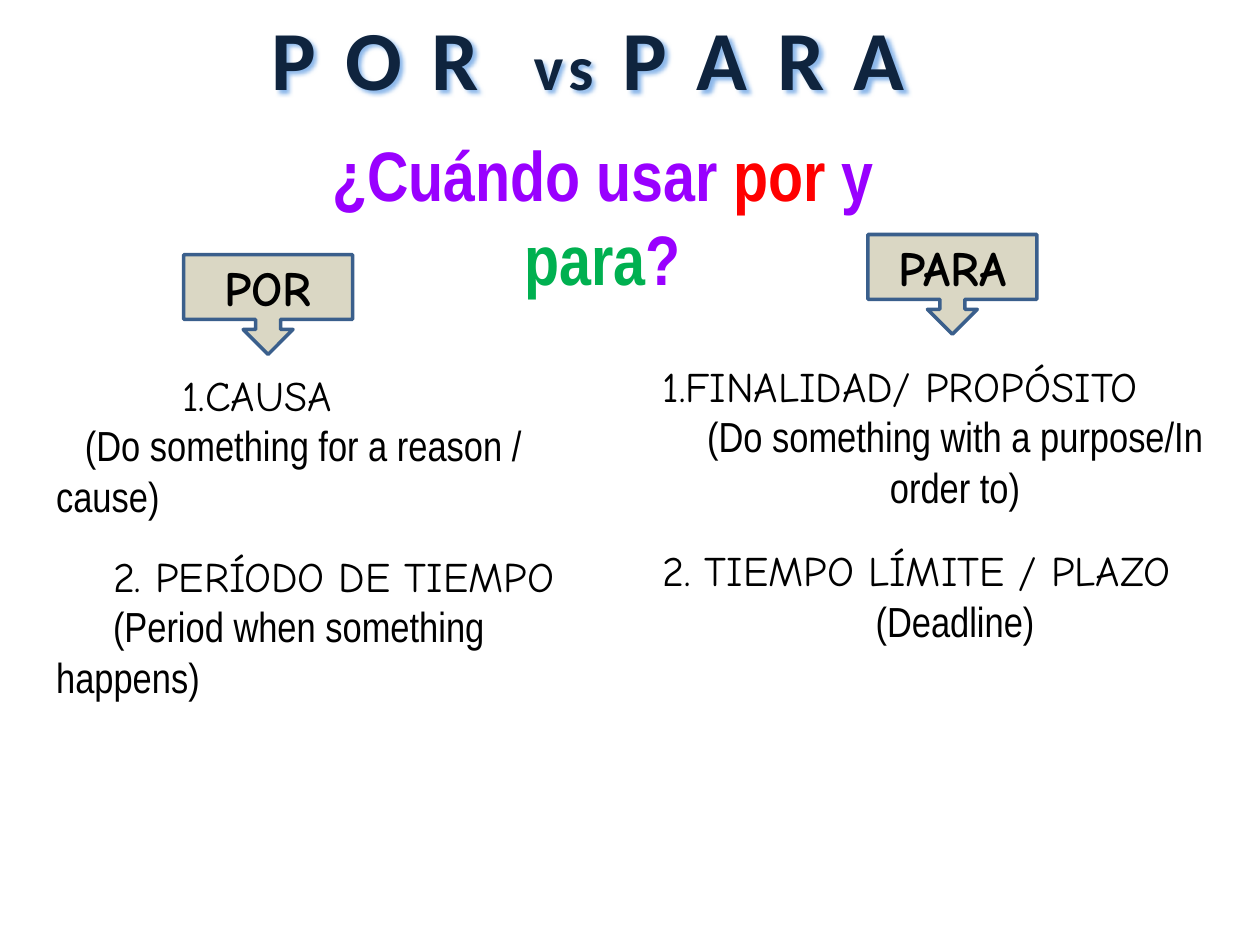
from pptx import Presentation
from pptx.dml.color import RGBColor
from pptx.enum.shapes import MSO_SHAPE
from pptx.enum.text import MSO_ANCHOR, PP_ALIGN
from pptx.oxml import parse_xml
from pptx.oxml.ns import nsdecls, qn
from pptx.util import Pt
from lxml import etree

CALLOUT = MSO_SHAPE.DOWN_ARROW_CALLOUT
TOP, MIDDLE = MSO_ANCHOR.TOP, MSO_ANCHOR.MIDDLE
LEFT, CENTER = PP_ALIGN.LEFT, PP_ALIGN.CENTER

NARROW, HAND, HEADING = "Arial Narrow", "Comic Neue", "Calibri"
BLACK, NAVY, PURPLE, RED, GREEN = "000000", "0F243E", "9900FF", "FF0000", "00B050"
TAN, BLUE = "948A54", "3A5F8C"


def color(value):
    return RGBColor.from_string(value)


def add_run(para, text, font, size, tint=BLACK, bold=False, spacing=0):
    span = para.add_run()
    span.text = text
    span.font.name = font
    span.font.size = Pt(size)
    span.font.bold = bold
    span.font.color.rgb = color(tint)
    if spacing:
        span.font._element.set("spc", str(round(spacing * 100)))


def add_textbox(page, box):
    frame = page.shapes.add_textbox(*map(Pt, box)).text_frame
    frame.word_wrap = True
    return frame


def add_title(page, box):
    title = page.shapes.title
    title.left, title.top, title.width, title.height = map(Pt, box)
    frame = title.text_frame
    frame.word_wrap = False
    frame.vertical_anchor = TOP
    para = frame.paragraphs[0]
    para.alignment = CENTER
    # The wide space sets the first word apart from "vs"
    for text, size, spacing in (("P O R", 48, 3), (" ", 48, 17),
                                ("vs", 36, 3), (" P A R A ", 48, 3)):
        add_run(para, text, HEADING, size, NAVY, True, spacing)
    # Soft light blue shadow behind the letters
    title._element.spPr.append(parse_xml(
        f'<a:effectLst {nsdecls("a")}>'
        '<a:outerShdw blurRad="25400" dist="25400" dir="2700000" algn="tl">'
        '<a:srgbClr val="8DB8EA"/></a:outerShdw></a:effectLst>'))


def add_question(page, box):
    para = add_textbox(page, box).paragraphs[0]
    para.alignment = CENTER
    for text, tint in (("¿Cuándo usar ", PURPLE), ("por", RED), (" y ", PURPLE),
                       ("para", GREEN), ("?", PURPLE)):
        add_run(para, text, NARROW, 40, tint, True)


def add_callout(page, box, word):
    callout = page.shapes.add_shape(CALLOUT, *map(Pt, box))
    callout.shadow.inherit = False
    callout.fill.solid()
    callout.fill.fore_color.rgb = color(TAN)
    tint = callout._element.spPr.find(qn("a:solidFill"))[0]
    etree.SubElement(tint, qn("a:alpha")).set("val", "34000")
    callout.line.color.rgb = color(BLUE)
    callout.line.width = Pt(2)
    frame = callout.text_frame
    frame.vertical_anchor = MIDDLE
    para = frame.paragraphs[0]
    para.alignment = CENTER
    add_run(para, word, HAND, 28, bold=True)


def add_uses(page, box, uses, gap, note_align):
    """Each use is a heading and a note, both with a first-line indent."""
    frame = add_textbox(page, box)
    para = frame.paragraphs[0]
    for number, (heading, heading_indent, note, note_indent) in enumerate(uses):
        if number:
            para = frame.add_paragraph()
            para.space_before = Pt(gap)
        para.alignment = LEFT
        para._p.get_or_add_pPr().set("indent", str(Pt(heading_indent)))
        add_run(para, heading, HAND, 24)
        para = frame.add_paragraph()
        para.alignment = note_align
        para._p.get_or_add_pPr().set("indent", str(Pt(note_indent)))
        add_run(para, note, NARROW, 24)


def main():
    deck = Presentation()
    deck.slide_width, deck.slide_height = Pt(720), Pt(540)
    page = deck.slides.add_slide(deck.slide_layouts[5])

    # Headings
    add_title(page, (144.5, 0, 397.5, 65.5))
    add_question(page, (167, 71.5, 355, 55.5))

    # Uses of each word
    add_uses(page, (25, 207.5, 329, 140.5), (
        ("1.CAUSA", 72, "(Do something for a reason / cause)", 16.5),
        ("2. PERÍODO DE TIEMPO", 32.5, "(Period when something happens)", 32.5),
    ), 17, LEFT)
    add_uses(page, (371.5, 202.5, 348.5, 143.5), (
        ("1.FINALIDAD/ PROPÓSITO", 0, "(Do something with a purpose/In order to)", 0),
        ("2. TIEMPO LÍMITE / PLAZO", 0, "(Deadline)", 0),
    ), 19, CENTER)

    # Labels pointing at the columns
    for left, top, word in ((105, 145.5, "POR"), (496, 134, "PARA")):
        add_callout(page, (left, top, 96.5, 57), word)

    deck.save("out.pptx")


if __name__ == "__main__":
    main()
